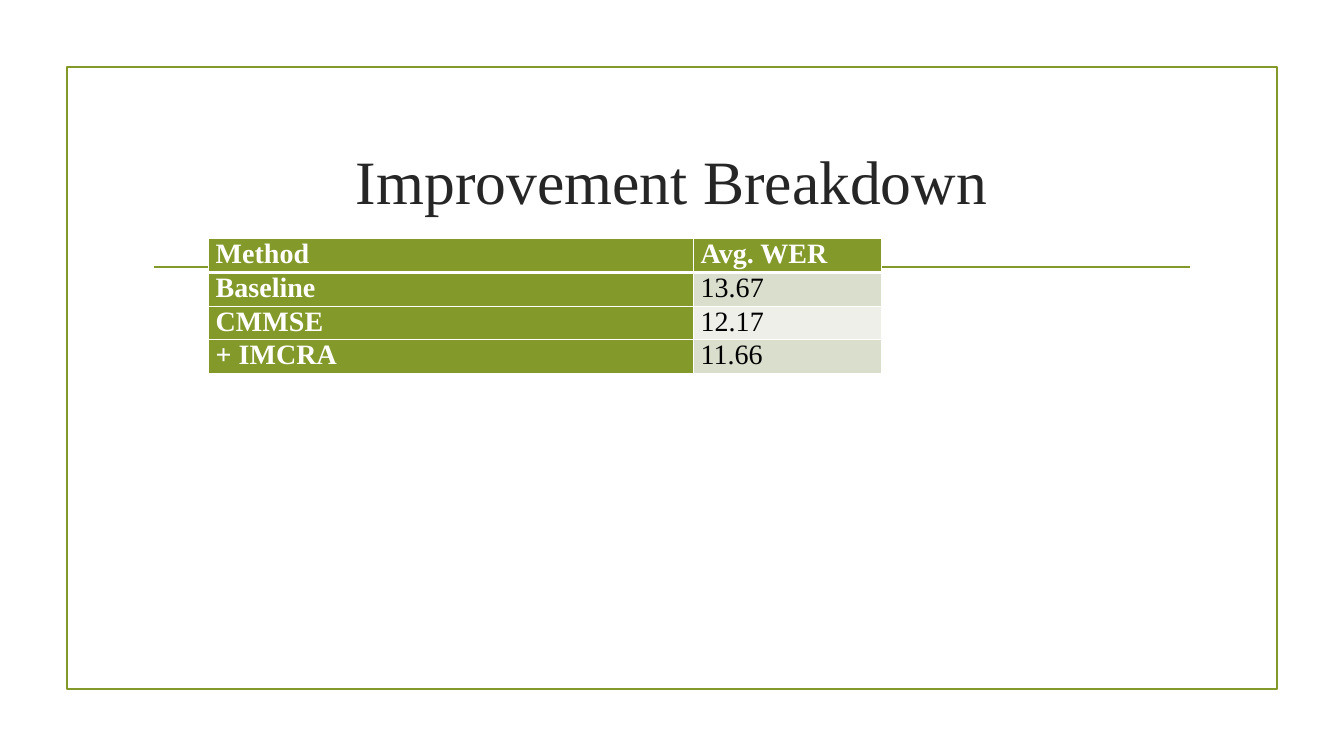
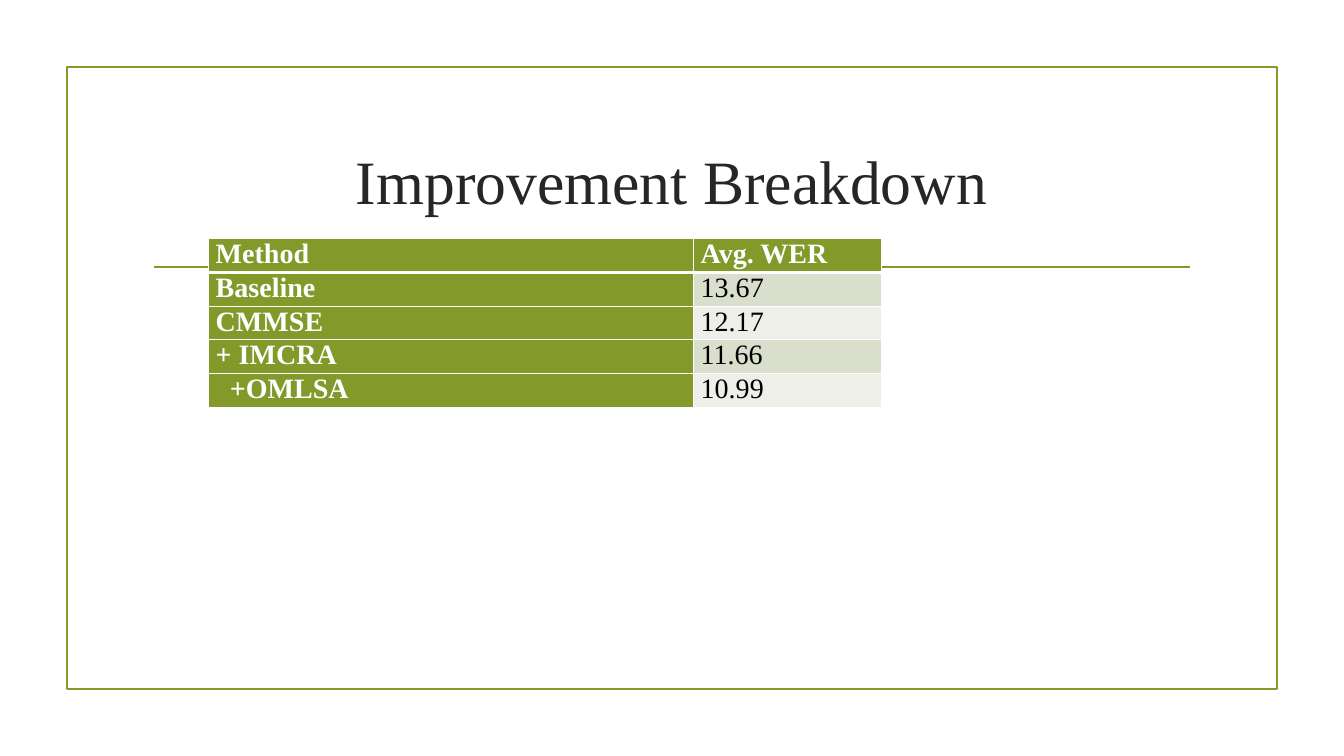
from lxml.etree import SubElement
from pptx import Presentation
from pptx.dml.color import RGBColor
from pptx.enum.shapes import MSO_CONNECTOR, MSO_SHAPE
from pptx.enum.text import MSO_ANCHOR, PP_ALIGN
from pptx.oxml.ns import qn
from pptx.util import Inches, Pt

TITLE = "Improvement Breakdown"
HEADER = ("Method", "Avg. WER")
# method, average word error rate, indent level
RESULTS = [
    ("Baseline", "13.67", 0),
    ("CMMSE", "12.17", 0),
    ("+ IMCRA", "11.66", 0),
    ("+OMLSA", "10.99", 1),
]
RESULTS_SHOWN = (3, 4)

FONT = "Times New Roman"
COLORS = {
    "accent": "83992A",
    "title": "262626",
    "band_dark": "D9DECD",
    "band_light": "EDEFE8",
    "white": "FFFFFF",
    "black": "000000",
}
SLIDE_WIDTH, SLIDE_HEIGHT = 13.33, 7.5
FRAME_WIDTH, FRAME_HEIGHT = 12, 6.17
RULE_WIDTH, RULE_TOP = 10.28, 2.65
TITLE_WIDTH, TITLE_TOP, TITLE_HEIGHT = 10.5, 1.07, 1.43
TABLE_LEFT, TABLE_TOP = 2.07, 2.37
COLUMN_WIDTHS = (4.81, 1.86)
ROW_HEIGHT = 0.3
CELL_MARGIN, INDENT = 0.07, 0.14
THIN, THICK = 1, 3


def color(name):
    return RGBColor.from_string(COLORS[name])


def centered(width):
    """Left edge that centres a width on the slide."""
    return Inches((SLIDE_WIDTH - width) / 2)


def style_line(line):
    line.color.rgb = color("accent")
    line.width = Pt(1.25)


def style_text(paragraph, size, color_name, alignment, bold=False):
    paragraph.alignment = alignment
    font = paragraph.font
    font.name, font.size, font.bold = FONT, Pt(size), bold
    font.color.rgb = color(color_name)


def add_frame(slide):
    frame = slide.shapes.add_shape(
        MSO_SHAPE.RECTANGLE, centered(FRAME_WIDTH),
        Inches((SLIDE_HEIGHT - FRAME_HEIGHT) / 2),
        Inches(FRAME_WIDTH), Inches(FRAME_HEIGHT))
    frame.shadow.inherit = False
    frame.fill.background()
    style_line(frame.line)

    left = centered(RULE_WIDTH)
    rule = slide.shapes.add_connector(
        MSO_CONNECTOR.STRAIGHT, left, Inches(RULE_TOP),
        left + Inches(RULE_WIDTH), Inches(RULE_TOP))
    style_line(rule.line)
    SubElement(rule._element.spPr, qn("a:effectLst"))


def add_title(slide):
    box = slide.shapes.add_textbox(
        centered(TITLE_WIDTH), Inches(TITLE_TOP),
        Inches(TITLE_WIDTH), Inches(TITLE_HEIGHT))
    text_frame = box.text_frame
    text_frame.word_wrap = True
    text_frame.vertical_anchor = MSO_ANCHOR.MIDDLE
    text_frame.text = TITLE
    style_text(text_frame.paragraphs[0], 44, "title", PP_ALIGN.CENTER)


def set_borders(cell, top, bottom):
    properties = cell._tc.get_or_add_tcPr()
    for side, width in (("L", THIN), ("R", THIN), ("T", top), ("B", bottom)):
        border = SubElement(properties, qn(f"a:ln{side}"), w=str(Pt(width)))
        fill = SubElement(border, qn("a:solidFill"))
        SubElement(fill, qn("a:srgbClr"), val=COLORS["white"])


def fill_cell(cell, text, row, column, level):
    heading = row == 0 or column == 0
    band = "band_dark" if row % 2 else "band_light"
    set_borders(cell, top=THICK if row == 1 else THIN,
                bottom=THICK if row == 0 else THIN)
    cell.fill.solid()
    cell.fill.fore_color.rgb = color("accent" if heading else band)
    cell.margin_left = Inches(CELL_MARGIN + level * INDENT)
    cell.margin_right = Inches(CELL_MARGIN)
    cell.margin_top = cell.margin_bottom = 0
    cell.text = text
    style_text(cell.text_frame.paragraphs[0], 20,
               "white" if heading else "black", PP_ALIGN.JUSTIFY, heading)


def add_results(slide, results):
    rows = [(*HEADER, 0), *results]
    table = slide.shapes.add_table(
        len(rows), len(HEADER), Inches(TABLE_LEFT), Inches(TABLE_TOP),
        Inches(sum(COLUMN_WIDTHS)), Inches(ROW_HEIGHT * len(rows))).table
    for column, width in zip(table.columns, COLUMN_WIDTHS):
        column.width = Inches(width)
    for row, (method, rate, level) in enumerate(rows):
        fill_cell(table.cell(row, 0), method, row, 0, level)
        fill_cell(table.cell(row, 1), rate, row, 1, 0)


def main():
    presentation = Presentation()
    presentation.slide_width = Inches(SLIDE_WIDTH)
    presentation.slide_height = Inches(SLIDE_HEIGHT)
    for count in RESULTS_SHOWN:
        slide = presentation.slides.add_slide(presentation.slide_layouts[6])
        add_frame(slide)
        add_title(slide)
        add_results(slide, RESULTS[:count])
    presentation.save("out.pptx")


if __name__ == "__main__":
    main()
